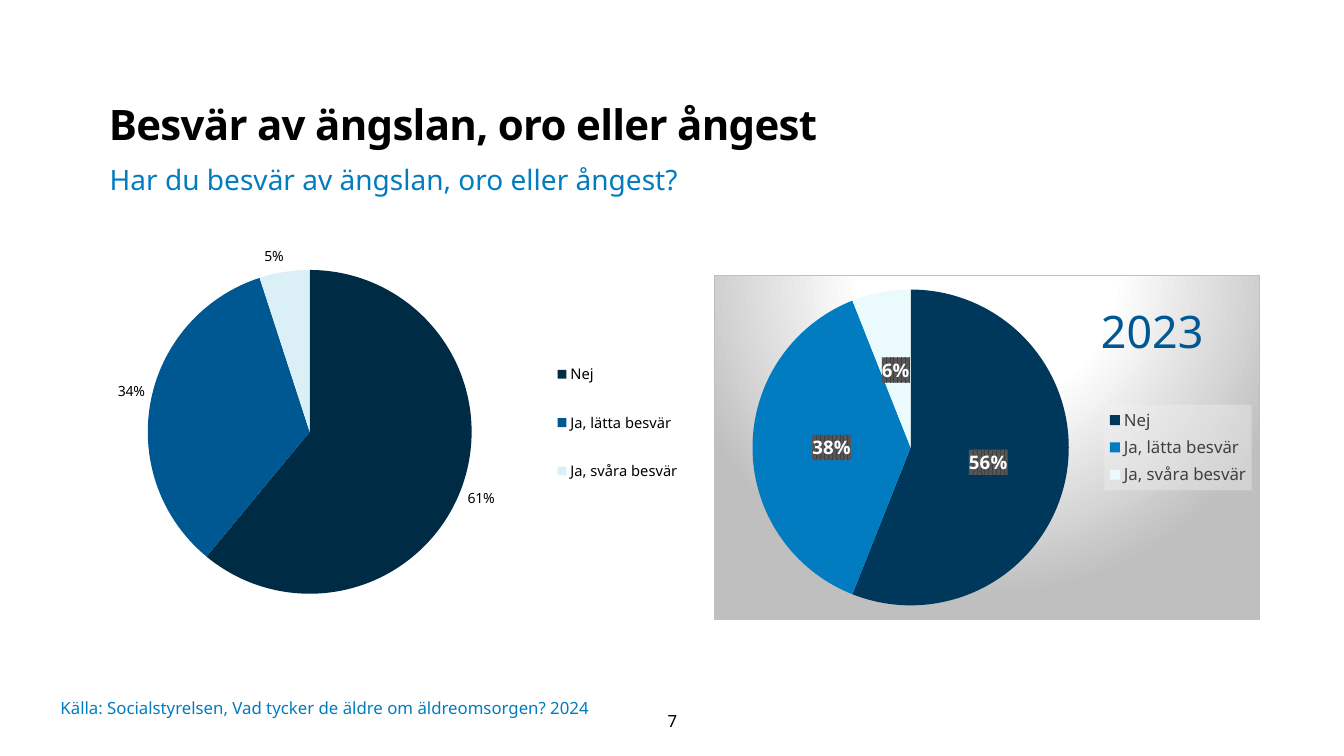
import pptx
import pptx.chart.data
import pptx.dml.color
import pptx.enum.chart
import pptx.enum.text
import pptx.oxml
import pptx.oxml.ns
import pptx.util
from pptx.util import Inches

FONT = "Noto Sans"
BLUE = "017CC1"
DEEP_BLUE = "005892"
BLACK = "000000"
ANSWERS = ("Nej", "Ja, lätta besvär", "Ja, svåra besvär")
TOP = pptx.enum.text.MSO_ANCHOR.TOP
MIDDLE = pptx.enum.text.MSO_ANCHOR.MIDDLE
LEFT = pptx.enum.text.PP_ALIGN.LEFT
CENTER = pptx.enum.text.PP_ALIGN.CENTER
LABEL_POSITION = pptx.enum.chart.XL_LABEL_POSITION
NAMESPACES = pptx.oxml.ns.nsdecls("c", "a")

BACKDROP = """<a:gradFill><a:gsLst>
<a:gs pos="0"><a:srgbClr val="FFFFFF"/></a:gs>
<a:gs pos="39000"><a:srgbClr val="FFFFFF"/></a:gs>
<a:gs pos="100000"><a:srgbClr val="BFBFBF"/></a:gs></a:gsLst>
<a:path path="circle"><a:fillToRect l="50000" t="-80000" r="50000" b="180000"/></a:path>
</a:gradFill><a:ln w="9525"><a:solidFill><a:srgbClr val="BFBFBF"/></a:solidFill></a:ln>"""
LEGEND_PANEL = """<a:solidFill><a:srgbClr val="F2F2F2"><a:alpha val="39000"/></a:srgbClr>
</a:solidFill>"""
LABEL_PATTERN = """<a:pattFill prst="pct75"><a:fgClr><a:srgbClr val="404040"/></a:fgClr>
<a:bgClr><a:srgbClr val="595959"/></a:bgClr></a:pattFill>"""


def rgb(color):
    return pptx.dml.color.RGBColor.from_string(color)


def format_font(font, size, color=BLACK, bold=False):
    font.name = FONT
    font.size = pptx.util.Pt(size)
    font.bold = bold
    font.color.rgb = rgb(color)


def place(shape, box):
    shape.left, shape.top, shape.width, shape.height = map(Inches, box)


def write(shape, text, size, color=BLACK, bold=False, align=LEFT, anchor=TOP,
          insets=(0.1, 0.05, 0.1, 0.05), line_spacing=None, tracking=None, grow=False):
    frame = shape.text_frame
    frame.word_wrap = True
    frame.vertical_anchor = anchor
    sizing = pptx.enum.text.MSO_AUTO_SIZE
    frame.auto_size = sizing.SHAPE_TO_FIT_TEXT if grow else sizing.NONE
    (frame.margin_left, frame.margin_top,
     frame.margin_right, frame.margin_bottom) = map(Inches, insets)
    paragraph = frame.paragraphs[0]
    paragraph.alignment = align
    paragraph.line_spacing = line_spacing
    run = paragraph.add_run()
    run.text = text
    format_font(run.font, size, color, bold)
    if tracking is not None:
        run.font._element.set("spc", str(int(tracking * 100)))


def add_text(slide, box, text, size, **style):
    write(slide.shapes.add_textbox(*map(Inches, box)), text, size, **style)


def shape_properties(content):
    return pptx.oxml.parse_xml(f"<c:spPr {NAMESPACES}>{content}</c:spPr>")


def set_layout(parent, index, area, target=""):
    for old in parent.findall(pptx.oxml.ns.qn("c:layout")):
        parent.remove(old)
    values = "".join(f'<c:{tag} val="{value}"/>' for tag, value in zip("xywh", area))
    parent.insert(index, pptx.oxml.parse_xml(
        f"<c:layout {NAMESPACES}><c:manualLayout>{target}"
        f'<c:xMode val="edge"/><c:yMode val="edge"/>{values}'
        "</c:manualLayout></c:layout>"))


def fill_before_text(parent, content):
    parent.find(pptx.oxml.ns.qn("c:txPr")).addprevious(shape_properties(content))


def add_pie(slide, box, shares, colors, plot_area, legend_area, legend_size,
            legend_color=BLACK, label_size=10, label_color=BLACK, label_bold=False,
            label_position=LABEL_POSITION.OUTSIDE_END):
    data = pptx.chart.data.CategoryChartData()
    data.categories = ANSWERS
    data.add_series("Series 1", shares)
    chart = slide.shapes.add_chart(
        pptx.enum.chart.XL_CHART_TYPE.PIE, *map(Inches, box), data).chart
    chart.has_title = False
    format_font(chart.font, 10)

    pie = chart.plots[0]
    pie.vary_by_categories = True
    for index, color in enumerate(colors):
        fill = pie.series[0].points[index].format.fill
        fill.solid()
        fill.fore_color.rgb = rgb(color)
    pie.has_data_labels = True
    labels = pie.data_labels
    labels.show_value = False
    labels.show_percentage = True
    labels.number_format = "0%"
    labels.number_format_is_linked = False
    labels.position = label_position
    format_font(labels.font, label_size, label_color, label_bold)

    chart.has_legend = True
    legend = chart.legend
    legend.position = pptx.enum.chart.XL_LEGEND_POSITION.RIGHT
    legend.include_in_layout = False
    format_font(legend.font, legend_size, legend_color)
    plot = pie._element.getparent()
    set_layout(plot, 0, plot_area, '<c:layoutTarget val="inner"/>')
    set_layout(legend._element, 1, legend_area)
    return chart


def decorate(chart):
    fill_before_text(chart._chartSpace, BACKDROP)
    fill_before_text(chart.legend._element, LEGEND_PANEL)
    fill_before_text(chart.plots[0].data_labels._element, LABEL_PATTERN)


def main():
    deck = pptx.Presentation()
    deck.slide_width, deck.slide_height = Inches(13.33), Inches(7.5)
    slide = deck.slides.add_slide(deck.slide_layouts[5])

    title = slide.shapes.title
    place(title, (1.08, 0.93, 9.74, 0.62))
    write(title, "Besvär av ängslan, oro eller ångest", 30, bold=True,
          insets=(0, 0, 0.1, 0.05), line_spacing=1.1, tracking=-0.5)
    add_text(slide, (0.99, 1.56, 8.96, 0.44),
             "Har du besvär av ängslan, oro eller ångest?", 20, color=BLUE, grow=True)

    add_pie(slide, (0.39, 2.45, 7.17, 3.67), (61, 34, 5),
            ("002B45", DEEP_BLUE, "DBF0F6"),
            plot_area=(0.15, 0.055, 0.448, 0.89),
            legend_area=(0.71, 0.24, 0.18, 0.47), legend_size=10.5)

    add_text(slide, (0.6, 6.75, 9.27, 0.55),
             "Källa: Socialstyrelsen, Vad tycker de äldre om äldreomsorgen? 2024",
             12, color=BLUE, anchor=MIDDLE, insets=(0, 0, 0, 0))
    add_text(slide, (6.16, 6.95, 1.02, 0.4), "7", 12, align=CENTER, anchor=MIDDLE)

    previous_year = add_pie(
        slide, (7.08, 2.73, 5.42, 3.42), (56, 38, 6), ("00385C", BLUE, "EBFAFC"),
        plot_area=(0.07, 0.04, 0.58, 0.92), legend_area=(0.715, 0.375, 0.27, 0.25),
        legend_size=12, legend_color="404040", label_size=13.3, label_color="FFFFFF",
        label_bold=True, label_position=LABEL_POSITION.CENTER)
    decorate(previous_year)
    add_text(slide, (10.82, 2.96, 1.52, 0.64), "2023", 32, color=DEEP_BLUE, grow=True)

    deck.save("out.pptx")


if __name__ == "__main__":
    main()
